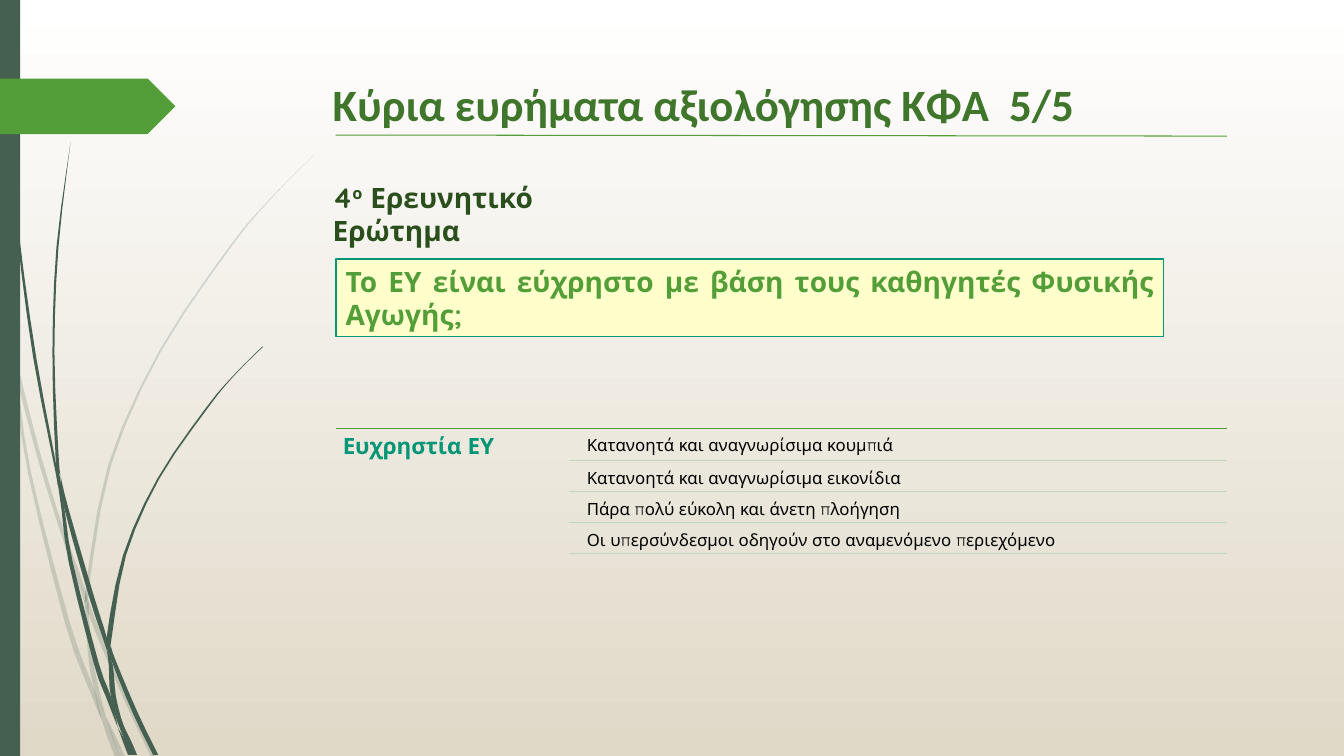
import pptx
import pptx.util
import pptx.dml.color
import pptx.enum.shapes
import pptx.enum.text
import pptx.oxml
import pptx.oxml.ns
import lxml.etree

Inches = pptx.util.Inches
Pt = pptx.util.Pt
SHAPE = pptx.enum.shapes.MSO_SHAPE
ALIGN = pptx.enum.text.PP_ALIGN
ANCHOR = pptx.enum.text.MSO_ANCHOR

TITLE = "Κύρια ευρήματα αξιολόγησης ΚΦΑ  5/5"
HEADING = [("4", 0), ("ο", 30), (" Ερευνητικό Ερώτημα", 0)]
QUESTION = "Το ΕΥ είναι εύχρηστο με βάση τους καθηγητές Φυσικής Αγωγής;"
TOPIC = "Ευχρηστία ΕΥ"
FINDINGS = [
    "Κατανοητά και αναγνωρίσιμα κουμπιά",
    "Κατανοητά και αναγνωρίσιμα εικονίδια",
    "Πάρα πολύ εύκολη και άνετη πλοήγηση",
    "Οι υπερσύνδεσμοι οδηγούν στο αναμενόμενο περιεχόμενο",
]
GREEN, SLATE, TEAL, PALE = "549E39", "455F51", "029676", "C3D6BF"
LEFT, RIGHT = 3.33, 12.17
TABLE_TOP, FIRST_RULE, PITCH = 4.25, 4.57, 0.307

# Each blade is a list of (left x, right x, y).
BACK_BLADES = [
    [(0, 0, 2.82), (0, 0.04, 2.99), (0.05, 0.09, 3.22), (0.11, 0.11, 3.5)],
    [(0.14, 0.14, 3.45), (0.17, 0.21, 3.76), (0.36, 0.4, 4.5), (0.58, 0.62, 5.22),
     (0.8, 0.85, 5.86), (0.84, 0.84, 5.99)],
    [(0.88, 0.88, 5.96), (0.88, 0.93, 6.1), (1.23, 1.28, 6.94), (1.5, 1.55, 7.51)],
    [(1.05, 1.05, 7.11), (1.11, 1.15, 7.31), (1.19, 1.24, 7.51)],
    [(0.11, 0.11, 3.5), (0.14, 0.17, 3.76), (0.28, 0.31, 4.7), (0.65, 0.7, 6.2),
     (0.88, 0.93, 6.83), (1.01, 1.01, 7.14)],
    [(0.84, 0.84, 5.99), (0.85, 0.88, 6.1), (0.87, 0.91, 6.46), (0.93, 0.98, 6.83),
     (1.05, 1.05, 7.11)],
    [(3.12, 3.12, 1.53), (2.68, 2.69, 1.97), (2.28, 2.3, 2.44), (1.58, 1.6, 3.48),
     (1.07, 1.1, 4.62), (0.85, 0.88, 5.84), (0.88, 0.88, 5.96)],
    [(1.01, 1.01, 7.14), (1.07, 1.1, 7.33), (1.14, 1.19, 7.51)],
    [(0.85, 0.85, 5.86), (0.84, 0.88, 5.98), (0.88, 0.88, 6.1)],
    [(0.93, 0.93, 6.83), (0.97, 1.01, 7.02), (1.01, 1.06, 7.14), (1.19, 1.19, 7.51)],
]
FRONT_BLADES = [
    [(0.03, 0.04, 0), (0.07, 0.08, 1.1), (0.17, 0.19, 2.33), (0.33, 0.36, 3.55),
     (0.55, 0.57, 4.68), (0.57, 0.57, 4.81)],
    [(0.6, 0.6, 4.72), (0.64, 0.68, 5.05), (0.88, 0.93, 5.91), (1.02, 1.06, 6.33),
     (1.06, 1.06, 6.45)],
    [(1.1, 1.1, 6.41), (1.11, 1.15, 6.56), (1.32, 1.37, 7.08), (1.52, 1.57, 7.49)],
    [(0.57, 0.57, 4.77), (0.61, 0.64, 5.05), (0.68, 0.72, 5.57), (0.93, 0.98, 6.58),
     (1.05, 1.1, 6.91), (1.17, 1.17, 7.22)],
    [(0.7, 0.7, 1.41), (0.56, 0.58, 2.45), (0.52, 0.54, 3.49), (0.55, 0.58, 4.5),
     (0.6, 0.6, 4.72)],
    [(1.22, 1.22, 7.19), (1.27, 1.3, 7.35), (1.33, 1.36, 7.49)],
    [(0.55, 0.55, 4.49), (0.57, 0.6, 4.77), (0.64, 0.64, 5.05)],
    [(2.6, 2.61, 3.44), (2.31, 2.32, 3.73), (2.04, 2.06, 4.05), (1.56, 1.58, 4.75),
     (1.22, 1.25, 5.51), (1.06, 1.11, 6.31), (1.1, 1.1, 6.41)],
    [(1.17, 1.17, 7.22), (1.22, 1.25, 7.36), (1.27, 1.31, 7.49)],
    [(1.06, 1.06, 6.45), (1.08, 1.12, 6.6), (1.1, 1.15, 6.91), (1.22, 1.22, 7.19)],
    [(1.06, 1.06, 6.31), (1.06, 1.1, 6.43), (1.11, 1.11, 6.56)],
    [(1.1, 1.1, 6.91), (1.16, 1.21, 7.15), (1.3, 1.33, 7.49)],
]


def rgb(color):
    return pptx.dml.color.RGBColor.from_string(color)


def paint(sp, fill, line=None, width=1.25):
    sp.shadow.inherit = False
    sp.fill.solid()
    sp.fill.fore_color.rgb = rgb(fill)
    if line:
        sp.line.color.rgb = rgb(line)
        sp.line.width = Pt(width)
    else:
        sp.line.fill.background()
    return sp


def block(s, shape, x, y, w, h, fill, line=None):
    sp = s.shapes.add_shape(shape, Inches(x), Inches(y), Inches(w), Inches(h))
    return paint(sp, fill, line)


def rule(s, x1, y1, x2, y2, color, width=1.25):
    line = s.shapes.add_connector(pptx.enum.shapes.MSO_CONNECTOR.STRAIGHT,
                                  Inches(x1), Inches(y1), Inches(x2), Inches(y2))
    line.line.color.rgb = rgb(color)
    line.line.width = Pt(width)
    lxml.etree.SubElement(line._element.spPr, pptx.oxml.ns.qn("a:effectLst"))


def style(p, size, color, bold, font="Quicksand", align=ALIGN.LEFT):
    p.alignment = align
    for r in p.runs:
        r.font.size, r.font.bold, r.font.name = Pt(size), bold, font
        r.font.color.rgb = rgb(color)


def text_box(s, x, y, w, h, text, size, color, bold, inset):
    tf = s.shapes.add_textbox(Inches(x), Inches(y), Inches(w), Inches(h)).text_frame
    tf.word_wrap = True
    tf.margin_left = tf.margin_right = tf.margin_top = tf.margin_bottom = Inches(inset)
    p = tf.paragraphs[0]
    p.text = text
    p.line_spacing = 0.9
    style(p, size, color, bold)


def smooth(points, steps=3):
    ends = [points[0]] + points + [points[-1]]
    curve = [points[0]]
    for a, b, c, d in zip(ends, ends[1:], ends[2:], ends[3:]):
        for i in range(1, steps + 1):
            t = i / steps
            curve.append(tuple(
                (2 * q + (r - p) * t + (2 * p - 5 * q + 4 * r - u) * t ** 2
                 + (3 * q - p - 3 * r + u) * t ** 3) / 2
                for p, q, r, u in zip(a, b, c, d)))
    return curve


def blade(s, points, alpha=None):
    curve = smooth(points)
    outline = [(x, y) for x, _, y in curve] + [(x, y) for _, x, y in reversed(curve)]
    outline = [(Inches(x), Inches(y)) for x, y in outline]
    builder = s.shapes.build_freeform(*outline[0])
    builder.add_line_segments(outline[1:], close=True)
    sp = paint(builder.convert_to_shape(), SLATE)
    if alpha:
        clr = sp._element.spPr.find(".//" + pptx.oxml.ns.qn("a:srgbClr"))
        lxml.etree.SubElement(clr, pptx.oxml.ns.qn("a:alpha")).set("val", str(alpha * 1000))


def main():
    prs = pptx.Presentation()
    prs.slide_width, prs.slide_height = Inches(13.33), Inches(7.5)
    s = prs.slides.add_slide(prs.slide_layouts[5])
    bg = s.background.fill
    bg.gradient()
    bg.gradient_angle = 270
    for stop, position, color in zip(bg.gradient_stops, (0, 1), ("FFFFFF", "E0D9C8")):
        stop.position = position
        stop.color.rgb = rgb(color)

    for points in BACK_BLADES:
        blade(s, points, 20)
    for points in FRONT_BLADES:
        blade(s, points)
    block(s, SHAPE.RECTANGLE, 0, 0, 0.2, 7.5, SLATE)
    block(s, SHAPE.PENTAGON, 0, 0.78, 1.74, 0.55, GREEN)

    title = s.shapes.title
    title.left, title.top, title.width, title.height = map(Inches, (3.2, 0.82, 8.97, 0.52))
    tf = title.text_frame
    tf.text = TITLE
    tf.auto_size = pptx.enum.text.MSO_AUTO_SIZE.NONE
    tf.vertical_anchor = ANCHOR.BOTTOM
    style(tf.paragraphs[0], 32, "3F762B", True, "Calibri")
    rule(s, LEFT, 1.34, RIGHT, 1.35, GREEN, 0.75)

    tf = s.shapes.add_textbox(Inches(3.2), Inches(1.74), Inches(3.32), Inches(0.44)).text_frame
    tf.word_wrap = True
    p = tf.paragraphs[0]
    for text, baseline in HEADING:
        r = p.add_run()
        r.text = text
        if baseline:
            r._r.get_or_add_rPr().set("baseline", str(baseline * 1000))
    style(p, 20, "2A4F1C", True)

    tf = block(s, SHAPE.RECTANGLE, LEFT, 2.57, 8.21, 0.77, "FFFFCC", TEAL).text_frame
    tf.text = QUESTION
    tf.word_wrap = True
    tf.vertical_anchor = ANCHOR.TOP
    style(tf.paragraphs[0], 20, GREEN, True, align=ALIGN.JUSTIFY)

    rule(s, LEFT, TABLE_TOP, RIGHT, TABLE_TOP, GREEN)
    text_box(s, LEFT, TABLE_TOP, 2.31, 1.28, TOPIC, 16, TEAL, True, 0.07)
    top = TABLE_TOP
    for i, finding in enumerate(FINDINGS):
        bottom = FIRST_RULE + i * PITCH
        text_box(s, 5.77, top + 0.04, 6.4, 0.27, finding, 12, "000000", False, 0.05)
        rule(s, 5.64, bottom, RIGHT, bottom, PALE)
        top = bottom
    prs.save("out.pptx")


if __name__ == "__main__":
    main()
